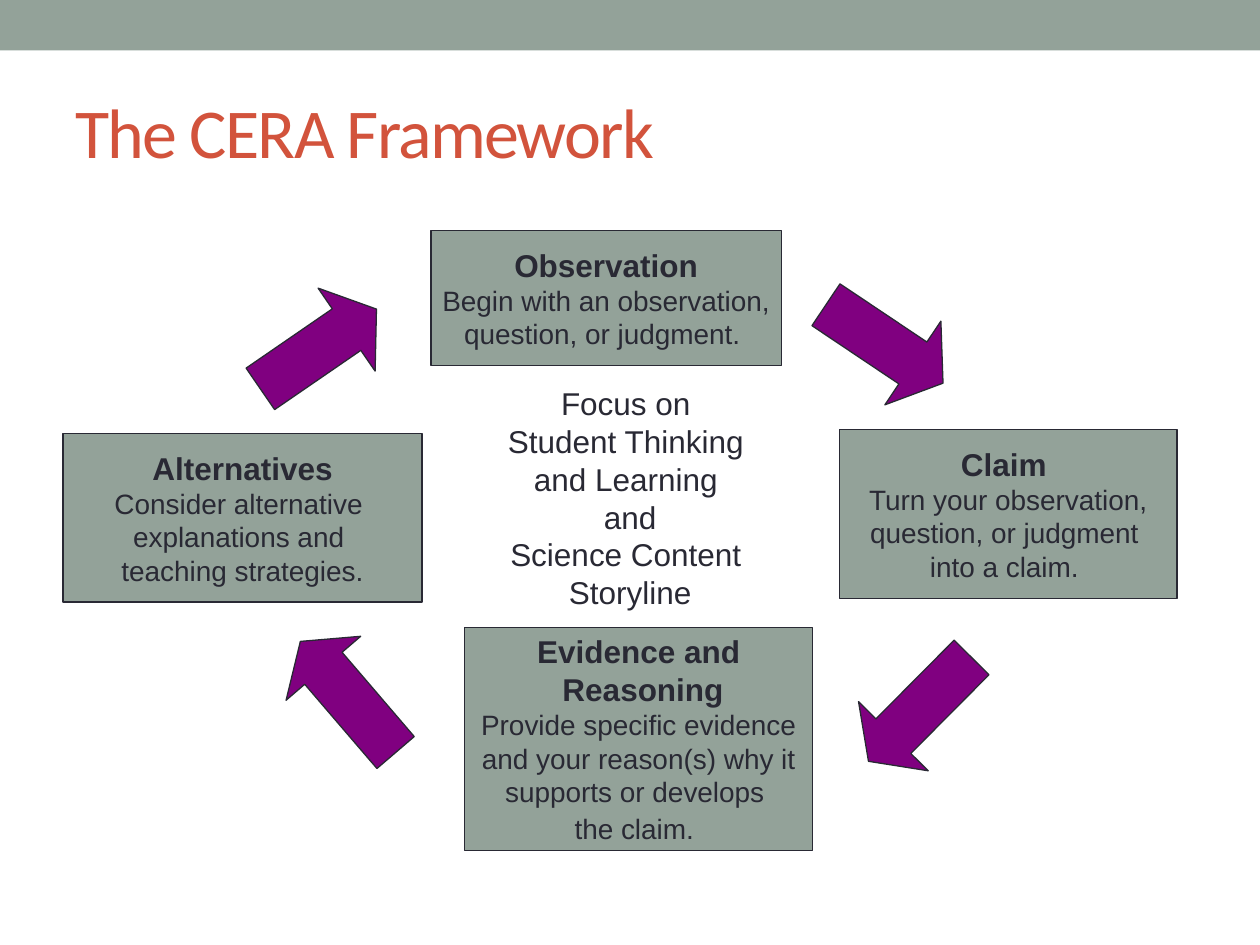
from pptx import Presentation
from pptx.dml.color import RGBColor
from pptx.enum.shapes import MSO_SHAPE as Kind
from pptx.enum.text import MSO_ANCHOR as Anchor, MSO_AUTO_SIZE as Auto, PP_ALIGN as Align
from pptx.util import Cm, Pt

SAGE, INK, RED, PLUM = "93A299", "292934", "D2533C", "800080"


def style(run, size, color=INK, face="Arial", bold=False):
    font = run.font
    font.size, font.name, font.bold = Pt(size), face, bold
    font.color.rgb = RGBColor.from_string(color)


def draw(kind, place, fill, line=None):
    shape = slide.shapes.add_shape(kind, *map(Cm, place))
    shape.shadow.inherit = False
    shape.fill.solid()
    shape.fill.fore_color.rgb = RGBColor.from_string(fill)
    if line:
        shape.line.color.rgb = RGBColor.from_string(line)
        shape.line.width = Pt(0.75)
    else:
        shape.line.fill.background()
    return shape


deck = Presentation()
deck.slide_width, deck.slide_height = Cm(25.4), Cm(19.05)
slide = deck.slides.add_slide(deck.slide_layouts[6])

draw(Kind.RECTANGLE, (0, 0, 25.4, 1.02), SAGE)

title = slide.shapes.add_textbox(Cm(1.27), Cm(1.27), Cm(22.86), Cm(2.74)).text_frame
title.word_wrap = True
title.vertical_anchor = Anchor.MIDDLE
title.text = "The CERA Framework"
run = title.paragraphs[0].runs[0]
style(run, 40, RED, "Calibri")
run._r.get_or_add_rPr().set("spc", "-100")

steps = [
    ((8.69, 4.65, 7.06, 2.72), ["Observation"],
     ["Begin with an observation,", "question, or judgment. "]),
    ((1.27, 8.74, 7.24, 3.4), ["Alternatives"],
     ["Consider alternative ", "explanations and ", "teaching strategies."]),
    ((16.92, 8.66, 6.81, 3.4), ["Claim "],
     ["Turn your observation,", "question, or judgment ", "into a claim. "]),
    ((9.37, 12.65, 7.01, 4.5), ["Evidence and", " Reasoning"],
     ["Provide specific evidence", " and your reason(s) why it ",
      "supports or develops ", "the claim."]),
]
for place, head, body in steps:
    frame = draw(Kind.RECTANGLE, place, SAGE, INK).text_frame
    frame.word_wrap = False
    frame.vertical_anchor = Anchor.MIDDLE
    frame.text = "\n".join(head + body)
    for i, para in enumerate(frame.paragraphs):
        para.alignment = Align.CENTER
        top = i < len(head)
        style(para.runs[0], 18 if top else 16, bold=top)
tail = para.add_run()
tail.text = " "
style(tail, 18)

focus = slide.shapes.add_textbox(Cm(9.96), Cm(7.62), Cm(5.49), Cm(4.88)).text_frame
focus.word_wrap = False
focus.auto_size = Auto.SHAPE_TO_FIT_TEXT
focus.text = "Focus on \nStudent Thinking \nand Learning \vand\nScience Content \nStoryline"
for para in focus.paragraphs:
    para.alignment = Align.CENTER
    for run in para.runs:
        style(run, 18)

arrows = [
    ((16.41, 5.92, 2.84, 2.03), 33.8),
    ((5.54, 13.06, 2.95, 1.98), 229.4),
    ((17.07, 13.31, 2.95, 1.98), 134.8),
    ((5, 6.02, 2.84, 2.03), 325.5),
]
for place, turn in arrows:
    arrow = draw(Kind.RIGHT_ARROW, place, PLUM, INK)
    arrow.adjustments[0] = 0.5
    arrow.adjustments[1] = 0.36
    arrow.rotation = turn

deck.save("out.pptx")
